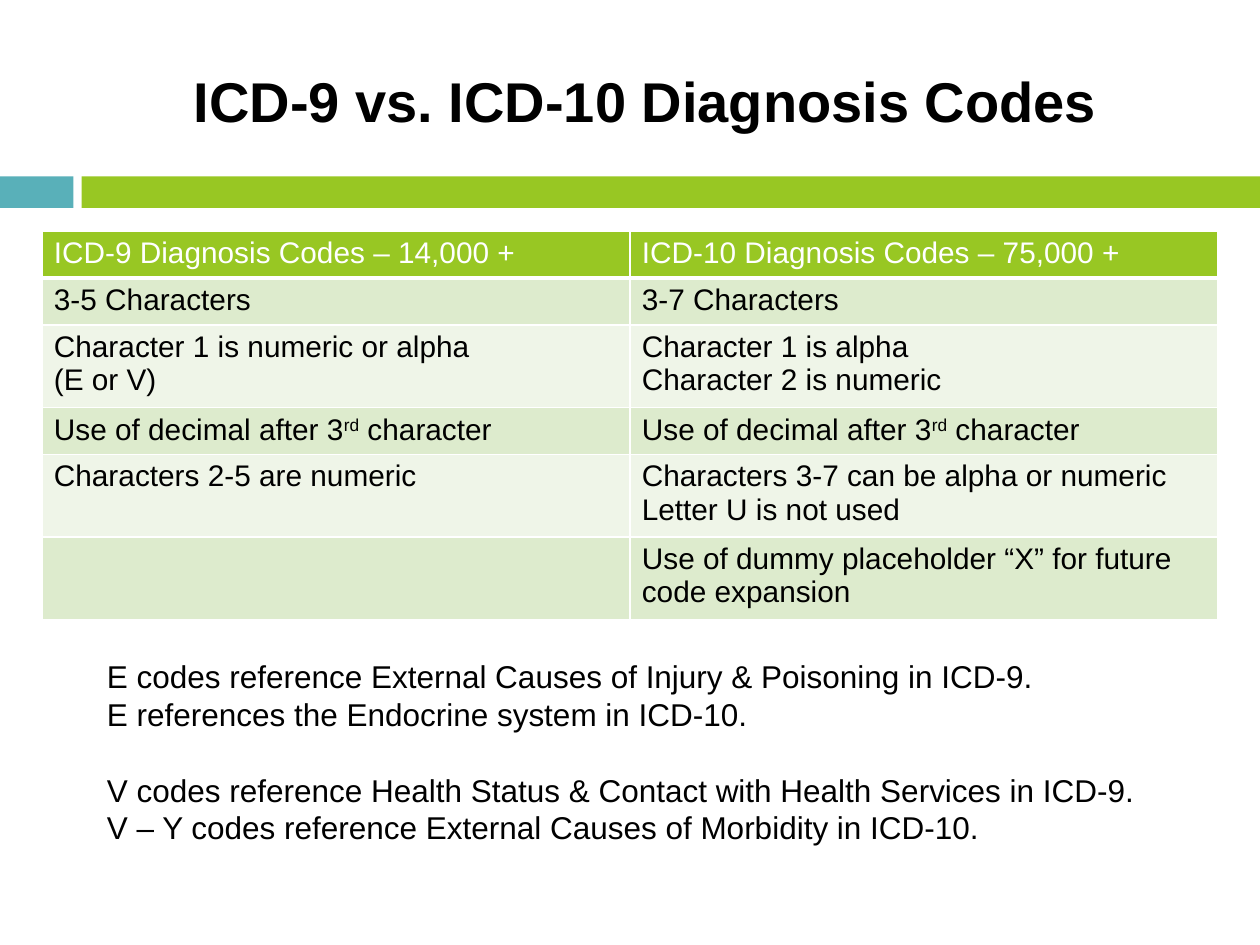
from lxml.etree import SubElement
from pptx import Presentation
from pptx.dml.color import RGBColor
from pptx.enum.shapes import MSO_SHAPE as Shape
from pptx.enum.text import MSO_ANCHOR as Anchor, MSO_AUTO_SIZE as AutoSize, PP_ALIGN as Align
from pptx.oxml.ns import qn
from pptx.util import Pt

BLACK, WHITE = "000000", "FFFFFF"
TEAL, GREEN = "59B0B9", "98C723"
BANDS = ("DDEBCD", "EFF5E8")

# A caret pair marks superscript text.
ROWS = [
    ("ICD-9 Diagnosis Codes – 14,000 +", "ICD-10 Diagnosis Codes – 75,000 +"),
    ("3-5 Characters", "3-7 Characters"),
    ("Character 1 is numeric or alpha\n(E or V)",
     "Character 1 is alpha\nCharacter 2 is numeric"),
    ("Use of decimal after 3^rd^ character", "Use of decimal after 3^rd^ character"),
    ("Characters 2-5 are numeric",
     "Characters 3-7 can be alpha or numeric\nLetter U is not used"),
    ("", "Use of dummy placeholder “X” for future code expansion"),
]
ROW_HEIGHTS = (25.7, 25.7, 45.1, 25.7, 45.1, 45.1)

NOTES = [
    "E codes reference External Causes of Injury & Poisoning in ICD-9.",
    "E references the Endocrine system in ICD-10.",
    "V codes reference Health Status & Contact with Health Services in ICD-9.",
    "V – Y codes reference External Causes of Morbidity in ICD-10.",
]


def color(code):
    return RGBColor.from_string(code)


class SlideWriter:
    font = "Arial"

    def __init__(self, slide):
        self.slide = slide

    def style(self, span, size, ink, bold=False):
        span.font.name = self.font
        span.font.size = Pt(size)
        span.font.bold = bold
        span.font.color.rgb = color(ink)

    def bar(self, left, top, width, height, fill):
        bar = self.slide.shapes.add_shape(
            Shape.RECTANGLE, Pt(left), Pt(top), Pt(width), Pt(height))
        bar.shadow.inherit = False
        bar.fill.solid()
        bar.fill.fore_color.rgb = color(fill)
        bar.line.fill.background()

    def text(self, left, top, width, height, text, size, bold=False,
             align=Align.LEFT, anchor=Anchor.TOP):
        box = self.slide.shapes.add_textbox(Pt(left), Pt(top), Pt(width), Pt(height))
        frame = box.text_frame
        frame.word_wrap = True
        frame.vertical_anchor = anchor
        frame.text = text
        for para in frame.paragraphs:
            para.alignment = align
            for span in para.runs:
                self.style(span, size, BLACK, bold)
        return box

    def borders(self, cell, bottom):
        properties = cell._tc.get_or_add_tcPr()
        for side, width in (("L", 1), ("R", 1), ("T", 1), ("B", bottom)):
            line = SubElement(properties, qn(f"a:ln{side}"), w=str(Pt(width)))
            fill = SubElement(line, qn("a:solidFill"))
            SubElement(fill, qn("a:srgbClr"), val=WHITE)

    def cell(self, cell, text, size, ink, fill, bottom):
        self.borders(cell, bottom)
        cell.fill.solid()
        cell.fill.fore_color.rgb = color(fill)
        cell.margin_left = cell.margin_right = Pt(6.8)
        cell.margin_top = cell.margin_bottom = Pt(3.2)
        cell.text_frame.text = text.replace("^", "")
        for para in cell.text_frame.paragraphs:
            if "^" in text:
                para.clear()
                for index, part in enumerate(text.split("^")):
                    span = para.add_run()
                    span.text = part
                    if index % 2:
                        span.font._element.set("baseline", "30000")
            for span in para.runs:
                self.style(span, size, ink)

    def table(self, left, top, width, rows, heights, size):
        columns = len(rows[0])
        table = self.slide.shapes.add_table(
            len(rows), columns, Pt(left), Pt(top), Pt(width), Pt(sum(heights))).table
        for column in table.columns:
            column.width = Pt(width / columns)
        for row, (texts, height) in enumerate(zip(rows, heights)):
            table.rows[row].height = Pt(height)
            header = row == 0
            fill = GREEN if header else BANDS[(row - 1) % 2]
            for column, text in enumerate(texts):
                self.cell(table.cell(row, column), text, size,
                          WHITE if header else BLACK, fill, 3 if header else 1)


def main():
    deck = Presentation()
    deck.slide_width, deck.slide_height = Pt(720), Pt(540)
    page = SlideWriter(deck.slides.add_slide(deck.slide_layouts[6]))

    # Divider bars
    page.bar(0, 100.8, 42, 18, TEAL)
    page.bar(46.6, 100.8, 673.4, 18, GREEN)

    # Title
    page.text(48, 18, 642, 78, "ICD-9 vs. ICD-10 Diagnosis Codes", 32,
              bold=True, align=Align.CENTER, anchor=Anchor.MIDDLE)

    # Comparison table
    page.table(24, 132, 672, ROWS, ROW_HEIGHTS, 17)

    # Notes, in two groups one line apart
    notes = page.text(54, 372, 607, 116.6, "\n".join(NOTES), 18)
    notes.text_frame.auto_size = AutoSize.SHAPE_TO_FIT_TEXT
    notes.text_frame.paragraphs[2].space_before = Pt(21.6)

    deck.save("out.pptx")


if __name__ == "__main__":
    main()
